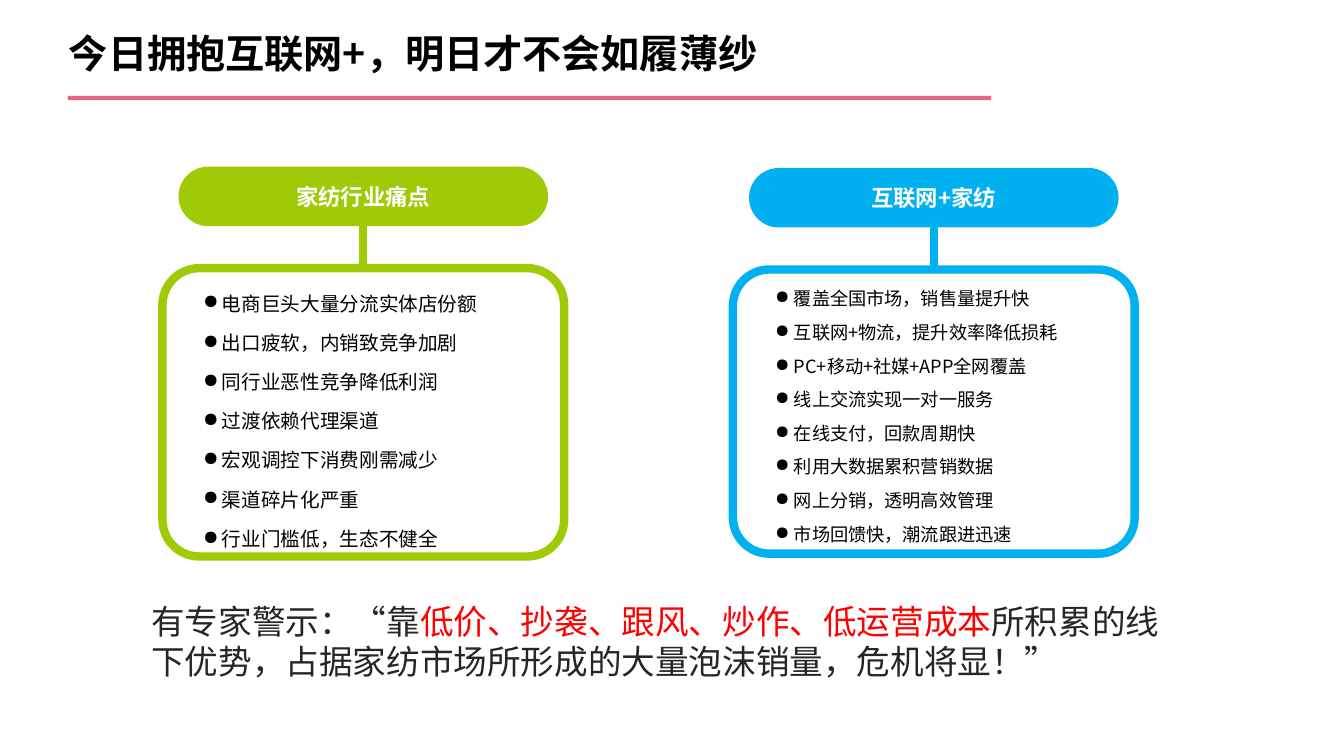
import pptx
import pptx.util
import pptx.dml.color
import pptx.enum.shapes
import pptx.enum.text
import pptx.oxml.ns
from lxml import etree

Pt = pptx.util.Pt
SHAPE = pptx.enum.shapes.MSO_SHAPE
ANCHOR = pptx.enum.text.MSO_ANCHOR
ALIGN = pptx.enum.text.PP_ALIGN
qn = pptx.oxml.ns.qn

FONT = "Noto Sans CJK SC"
COLORS = {
    "green": "9ECA06", "blue": "00B0F0", "pink": "E66684", "red": "FF0000",
    "white": "FFFFFF", "black": "000000", "dark": "262626",
}
PAINS = [
    "电商巨头大量分流实体店份额", "出口疲软，内销致竞争加剧",
    "同行业恶性竞争降低利润", "过渡依赖代理渠道",
    "宏观调控下消费刚需减少", "渠道碎片化严重", "行业门槛低，生态不健全",
]
GAINS = [
    "覆盖全国市场，销售量提升快", "互联网+物流，提升效率降低损耗",
    "PC+移动+社媒+APP全网覆盖", "线上交流实现一对一服务",
    "在线支付，回款周期快", "利用大数据累积营销数据",
    "网上分销，透明高效管理", "市场回馈快，潮流跟进迅速",
]


def rgb(name):
    return pptx.dml.color.RGBColor.from_string(COLORS[name])


def add_run(para, text, size, color, bold=False):
    run = para.add_run()
    run.text = text
    font = run.font
    font.size, font.bold, font.name = Pt(size), bold, FONT
    font.color.rgb = rgb(color)
    latin = run.font._element.find(qn("a:latin"))
    east = etree.Element(qn("a:ea"), typeface=FONT)
    latin.addnext(east)


def add_block(slide, kind, box, fill, line=None, round_by=None):
    shape = slide.shapes.add_shape(kind, *map(Pt, box))
    shape.shadow.inherit = False
    shape.fill.solid()
    shape.fill.fore_color.rgb = rgb(fill)
    if line:
        shape.line.color.rgb = rgb(line)
        shape.line.width = Pt(6)
    else:
        shape.line.fill.background()
    if round_by is not None:
        shape.adjustments[0] = round_by
    return shape


def add_text(slide, box):
    frame = slide.shapes.add_textbox(*map(Pt, box)).text_frame
    frame.word_wrap = True
    return frame


def add_title(slide, box):
    """Title with the pink rule below it."""
    left, top, width, height = box
    title = slide.shapes.title
    title.left, title.top, title.width, title.height = map(Pt, box)
    frame = title.text_frame
    frame.word_wrap = True
    frame.vertical_anchor = ANCHOR.TOP
    para = frame.paragraphs[0]
    para.alignment = ALIGN.LEFT
    para.line_spacing = 0.9
    add_run(para, "今日拥抱互联网+，明日才不会如履薄纱", 28, "black", True)
    add_block(slide, SHAPE.RECTANGLE, (left + 6.5, top + 47.5, 659.5, 3), "pink")


def add_list(slide, box, items, size, pitch):
    frame = add_text(slide, box)
    for i, item in enumerate(items):
        para = frame.add_paragraph() if i else frame.paragraphs[0]
        props = para._p.get_or_add_pPr()
        props.set("marL", str(Pt(13.5)))
        props.set("indent", str(-Pt(13.5)))
        etree.SubElement(props, qn("a:buChar"), char="●")
        para.line_spacing = Pt(pitch)
        add_run(para, item, size, "black")


def add_panel(slide, box, color, head, items, size, pitch, text_box):
    """Header pill joined to a framed list; text_box is relative to the box."""
    left, top, width, height = box
    pill = add_block(slide, SHAPE.ROUNDED_RECTANGLE,
                     (left + 11.5, top, width - 23, 42.5), color, round_by=0.5)
    pill.text_frame.vertical_anchor = ANCHOR.MIDDLE
    para = pill.text_frame.paragraphs[0]
    para.alignment = ALIGN.CENTER
    add_run(para, head, 16, "white", True)
    frame = add_block(slide, SHAPE.ROUNDED_RECTANGLE,
                      (left, top + 72.5, width, height - 72.5),
                      "white", color, 0.128)
    stem = slide.shapes.add_connector(
        pptx.enum.shapes.MSO_CONNECTOR.STRAIGHT, 0, 0, 0, 0)
    stem.begin_connect(pill, 2)
    stem.end_connect(frame, 0)
    stem.line.color.rgb = rgb(color)
    stem.line.width = Pt(6)
    etree.SubElement(stem._element.spPr, qn("a:effectLst"))
    dx, dy, wide, tall = text_box
    add_list(slide, (left + dx, top + dy, wide, tall), items, size, pitch)


def add_quote(slide, box):
    para = add_text(slide, box).paragraphs[0]
    for text, color in [
        ("有专家警示：“靠", "dark"),
        ("低价、抄袭、跟风、炒作、低运营成本", "red"),
        ("所积累的线下优势，占据家纺市场所形成的大量泡沫销量，危机将显！”", "dark"),
    ]:
        add_run(para, text, 24, color)


def main():
    deck = pptx.Presentation()
    deck.slide_width, deck.slide_height = Pt(960), Pt(540)
    slide = deck.slides.add_slide(deck.slide_layouts[5])
    add_title(slide, (42, 21, 549, 49))
    add_panel(slide, (116, 119, 287, 278.5), "green", "家纺行业痛点",
              PAINS, 14, 28, (22, 74.5, 240, 205))
    add_panel(slide, (523.5, 120, 287, 275.5), "blue", "互联网+家纺",
              GAINS, 13, 24, (23, 73.5, 278.5, 198))
    add_quote(slide, (101, 425.5, 735, 65.5))
    deck.save("out.pptx")


if __name__ == "__main__":
    main()
